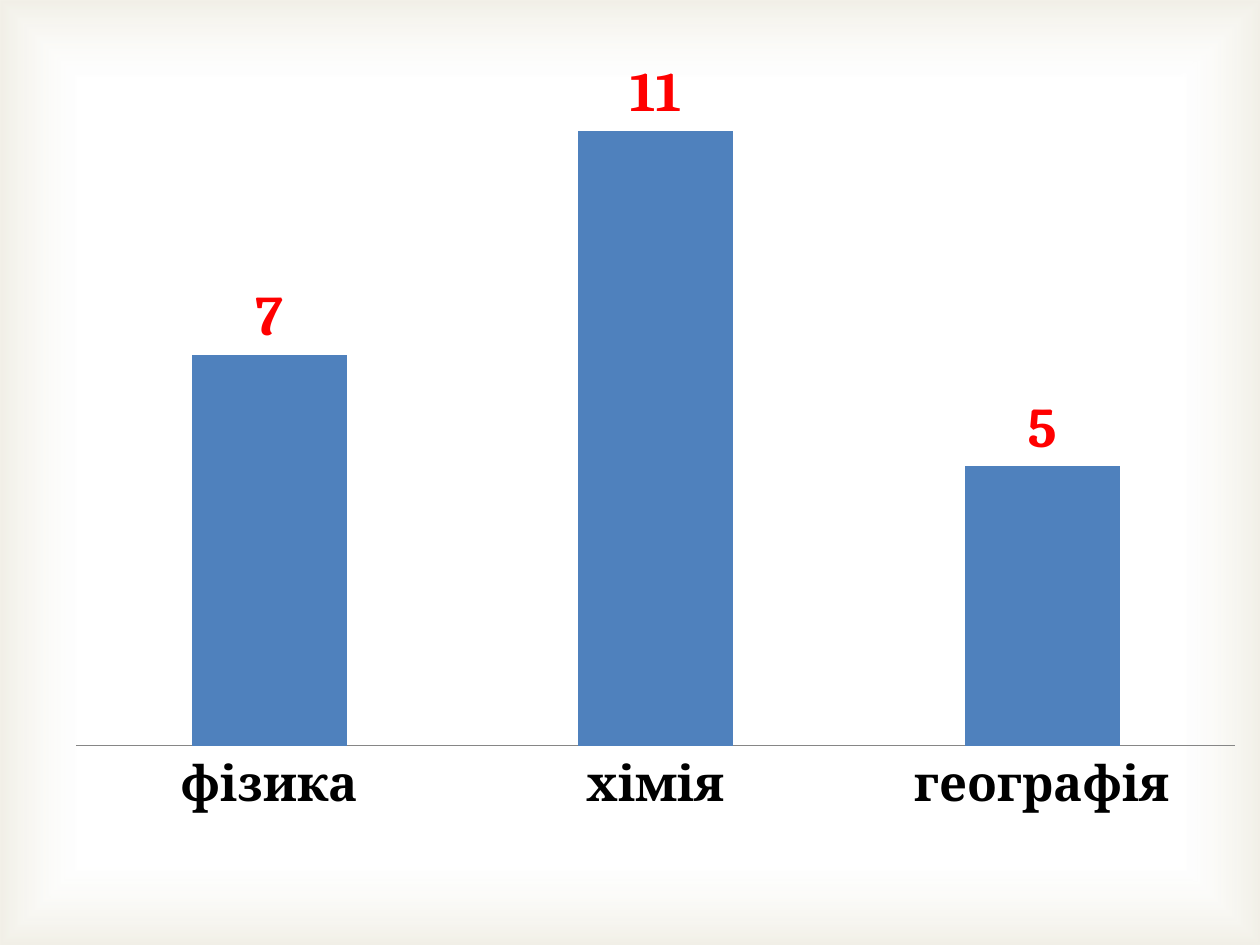
from lxml import etree
from pptx import Presentation
from pptx.chart.data import CategoryChartData
from pptx.dml.color import RGBColor
from pptx.enum.chart import XL_CHART_TYPE, XL_LABEL_POSITION, XL_TICK_LABEL_POSITION, XL_TICK_MARK
from pptx.enum.shapes import MSO_SHAPE
from pptx.oxml import parse_xml
from pptx.oxml.ns import nsdecls, qn
from pptx.util import Pt

RECT = MSO_SHAPE.RECTANGLE
COLUMN = XL_CHART_TYPE.COLUMN_CLUSTERED
OUTSIDE = XL_LABEL_POSITION.OUTSIDE_END
NO_TICK = XL_TICK_MARK.NONE
LOW = XL_TICK_LABEL_POSITION.LOW
WIDE, HIGH = 720, 540


def color(code):
    return RGBColor.from_string(code)


class Deck:
    face = "Cambria"
    ink = "000000"
    bar = "4F81BD"
    mark = "FF0000"
    rule = "868686"

    def __init__(self, slide):
        self.slide = slide

    def style(self, font, size, code, bold=False):
        font.name = self.face
        font.size = Pt(size)
        font.bold = bold
        font.color.rgb = color(code)

    def frame(self, stops):
        """Full-slide rectangle that fades in from the edges."""
        shape = self.slide.shapes.add_shape(RECT, 0, 0, Pt(WIDE), Pt(HIGH))
        shape.shadow.inherit = False
        shape.line.fill.background()
        shape.fill.background()
        marks = "".join(
            f'<a:gs pos="{pos * 1000}"><a:srgbClr val="{code}">'
            f'<a:alpha val="{alpha * 1000}"/></a:srgbClr></a:gs>'
            for pos, code, alpha in stops)
        grad = parse_xml(
            f'<a:gradFill {nsdecls("a")} rotWithShape="1"><a:gsLst>{marks}</a:gsLst>'
            '<a:path path="rect"><a:fillToRect l="50000" t="50000" r="50000" b="50000"/>'
            '</a:path></a:gradFill>')
        props = shape.element.spPr
        props.replace(props.find(qn("a:noFill")), grad)

    def chart(self, box, names, vals, top, plot):
        data = CategoryChartData()
        data.categories = names
        data.add_series("Series 1", vals)
        sides = [Pt(side) for side in box]
        chart = self.slide.shapes.add_chart(COLUMN, *sides, data).chart
        chart.has_legend = False
        chart.has_title = False
        self.style(chart.font, 10, self.ink)

        # Axes
        axis = chart.category_axis
        axis.major_tick_mark = axis.minor_tick_mark = NO_TICK
        axis.tick_label_position = LOW
        axis.format.line.color.rgb = color(self.rule)
        self.style(axis.tick_labels.font, 28, self.ink, True)
        scale = chart.value_axis
        scale.minimum_scale, scale.maximum_scale = 0, top
        scale.has_major_gridlines = False
        scale.visible = False

        # Bars and their labels
        bars = chart.plots[0]
        bars.gap_width = 150
        bars.vary_by_categories = False
        row = bars.series[0]
        row.format.fill.solid()
        row.format.fill.fore_color.rgb = color(self.bar)
        labels = row.data_labels
        labels.show_value = True
        labels.position = OUTSIDE
        self.style(labels.font, 32, self.mark, True)
        self.place(chart, plot)

    def place(self, chart, plot):
        """Fix the inner plot area as fractions of the chart."""
        area = chart.element.find(".//" + qn("c:plotArea"))
        old = area.find(qn("c:layout"))
        if old is not None:
            area.remove(old)
        layout = parse_xml(f'<c:layout {nsdecls("c")}/>')
        manual = etree.SubElement(layout, qn("c:manualLayout"))
        parts = [("layoutTarget", "inner"), ("xMode", "edge"), ("yMode", "edge")]
        for tag, val in parts + list(zip("xywh", plot)):
            etree.SubElement(manual, qn("c:" + tag)).set("val", str(val))
        area.insert(0, layout)


def main():
    show = Presentation()
    show.slide_width, show.slide_height = Pt(WIDE), Pt(HIGH)
    deck = Deck(show.slides.add_slide(show.slide_layouts[6]))

    # Soft border
    deck.frame([(83, "FFFFFF", 11), (100, "C4BD97", 23)])

    # Subject counts
    deck.chart((14.4, 20.9, 692, 493), ("фізика", "хімія", "географія"),
               (7, 11, 5), 12, (0.042, 0.045, 0.958, 0.777))
    show.save("out.pptx")


if __name__ == "__main__":
    main()
